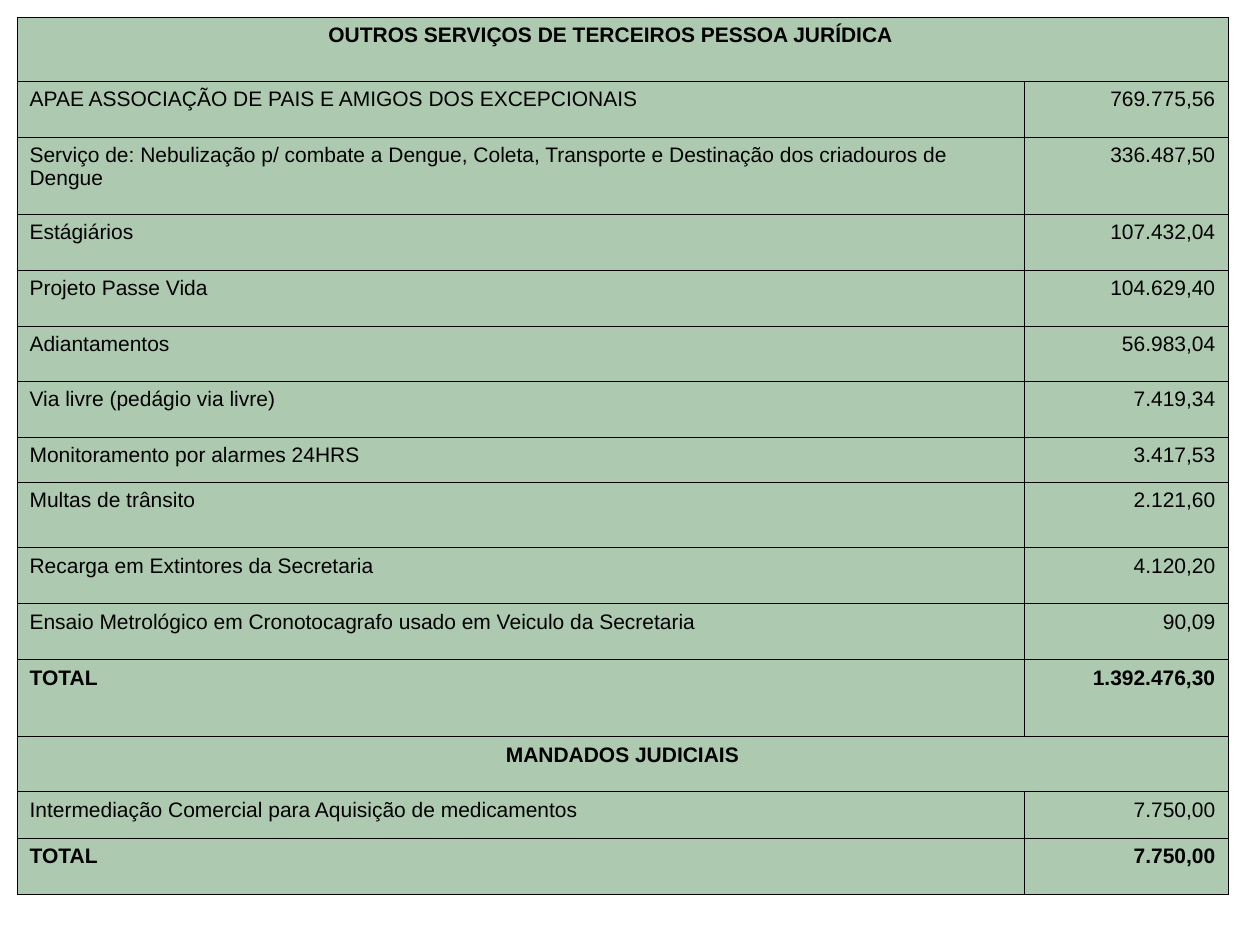
"""Build a one-slide table of outsourced service expenses."""
from lxml import etree
from pptx import Presentation
from pptx import util as u
from pptx.dml.color import RGBColor
from pptx.enum import text
from pptx.oxml.ns import qn

SCALE = 914400 / 126
GREEN = RGBColor(0xAA, 0xC8, 0xAD)
BLACK = RGBColor(0, 0, 0)
OPACITY = 96
BORDER = u.Pt(0.34)
COLUMNS = (1007, 204)

# label, amount (None for a heading), row height
EXPENSES = [
    ("OUTROS SERVIÇOS DE TERCEIROS PESSOA JURÍDICA", None, 64),
    ("APAE ASSOCIAÇÃO DE PAIS E AMIGOS DOS EXCEPCIONAIS", "769.775,56", 56),
    ("Serviço de: Nebulização p/ combate a Dengue, Coleta, Transporte e "
     "Destinação dos criadouros de Dengue", "336.487,50", 77),
    ("Estágiários", "107.432,04", 56),
    ("Projeto Passe Vida", "104.629,40", 56),
    ("Adiantamentos", "56.983,04", 55),
    ("Via livre (pedágio via livre)", "7.419,34", 56),
    ("Monitoramento por alarmes 24HRS", "3.417,53", 45),
    ("Multas de trânsito", "2.121,60", 66),
    ("Recarga em Extintores da Secretaria", "4.120,20", 56),
    ("Ensaio Metrológico em Cronotocagrafo usado em Veiculo da Secretaria", "90,09", 56),
    ("TOTAL", "1.392.476,30", 77),
    ("MANDADOS JUDICIAIS", None, 55),
    ("Intermediação Comercial para Aquisição de medicamentos", "7.750,00", 47),
    ("TOTAL", "7.750,00", 56),
]


def px(length):
    return u.Emu(round(length * SCALE))


def style_cell(cell):
    properties = cell._tc.get_or_add_tcPr()
    for side in ("lnL", "lnR", "lnT", "lnB"):
        line = etree.SubElement(properties, qn(f"a:{side}"), w=str(BORDER))
        paint = etree.SubElement(line, qn("a:solidFill"))
        etree.SubElement(paint, qn("a:srgbClr"), val=str(BLACK))
    cell.fill.solid()
    cell.fill.fore_color.rgb = GREEN
    tint = properties.find(qn("a:solidFill")).find(qn("a:srgbClr"))
    etree.SubElement(tint, qn("a:alpha"), val=str(OPACITY * 1000))


def write(cell, wording, bold=False, align=text.PP_ALIGN.LEFT):
    paragraph = cell.text_frame.paragraphs[0]
    paragraph.alignment = align
    run = paragraph.add_run()
    run.text = wording
    run.font.name = "Arial"
    run.font.size = u.Pt(12)
    run.font.bold = bold
    run.font.color.rgb = BLACK


def main():
    deck = Presentation()
    deck.slide_width, deck.slide_height = px(1260), px(945)
    slide = deck.slides.add_slide(deck.slide_layouts[6])
    total_height = sum(height for _, _, height in EXPENSES)
    expenses = slide.shapes.add_table(
        len(EXPENSES), len(COLUMNS), px(17), px(17), px(sum(COLUMNS)), px(total_height)
    ).table
    expenses.first_row = expenses.horz_banding = False
    for column, width in zip(expenses.columns, COLUMNS):
        column.width = px(width)

    for index, (label, amount, height) in enumerate(EXPENSES):
        expenses.rows[index].height = px(height)
        label_cell, amount_cell = expenses.cell(index, 0), expenses.cell(index, 1)
        style_cell(label_cell)
        style_cell(amount_cell)
        if amount is None:
            label_cell.merge(amount_cell)
            write(label_cell, label, bold=True, align=text.PP_ALIGN.CENTER)
        else:
            bold = label == "TOTAL"
            write(label_cell, label, bold=bold)
            write(amount_cell, amount, bold=bold, align=text.PP_ALIGN.RIGHT)

    expenses.cell(0, 0).margin_right = px(36)
    deck.save("out.pptx")


if __name__ == "__main__":
    main()
